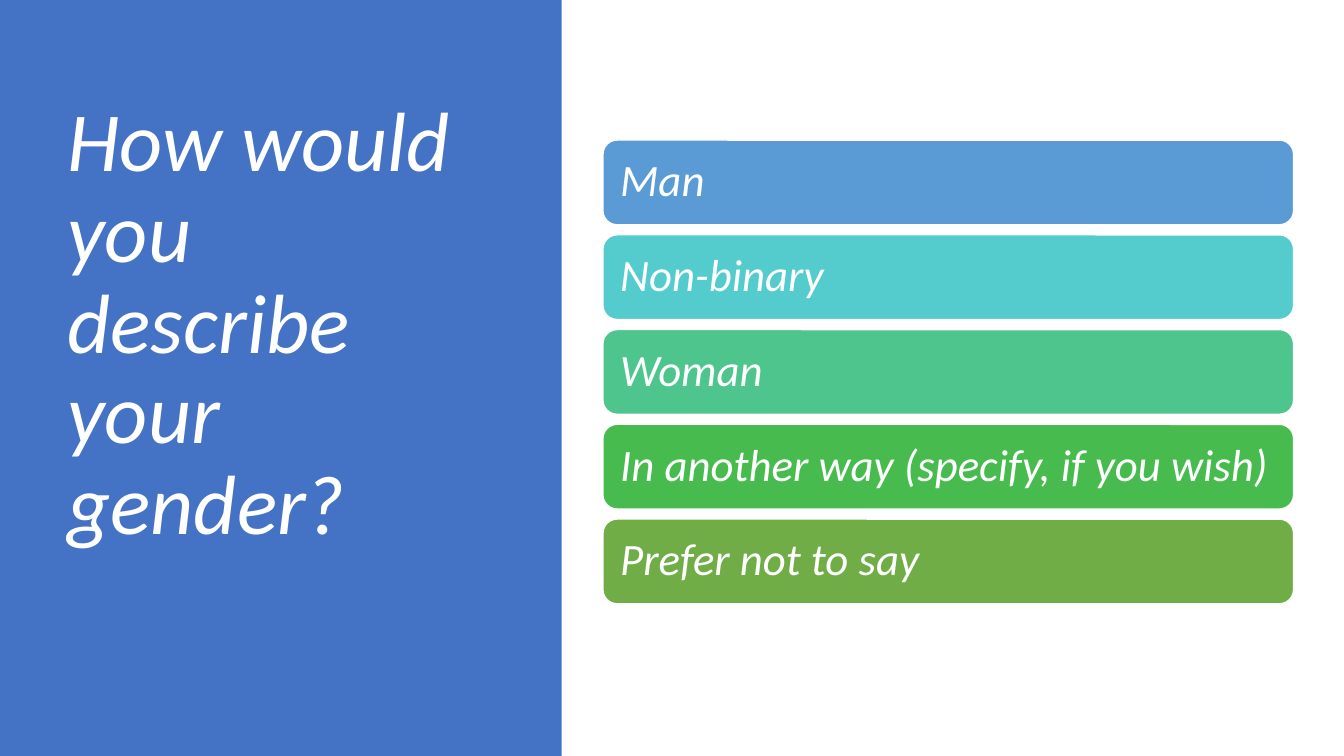
"""Build a slide that asks a question about gender beside five answer bars."""
import pptx
import pptx.dml.color
import pptx.enum.shapes
import pptx.enum.text
import pptx.util

Inches = pptx.util.Inches
RGBColor = pptx.dml.color.RGBColor
Shapes = pptx.enum.shapes.MSO_SHAPE

WHITE = RGBColor(0xFF, 0xFF, 0xFF)
PANEL_BLUE = RGBColor(0x44, 0x72, 0xC4)
ANSWERS = {
    "Man": RGBColor(0x5B, 0x9B, 0xD5),
    "Non-binary": RGBColor(0x54, 0xCC, 0xCD),
    "Woman": RGBColor(0x4D, 0xC5, 0x8D),
    "In another way (specify, if you wish)": RGBColor(0x48, 0xBB, 0x4F),
    "Prefer not to say": RGBColor(0x70, 0xAD, 0x47),
}
BAR_LEFT, BAR_TOP, BAR_WIDTH, BAR_HEIGHT, BAR_PITCH = 5.98, 1.39, 6.85, 0.84, 0.94


def write_text(shape, text, size, margins):
    """Put white italic text, left-aligned and vertically centred, in a shape."""
    frame = shape.text_frame
    frame.word_wrap = True
    frame.vertical_anchor = pptx.enum.text.MSO_ANCHOR.MIDDLE
    for side, margin in margins.items():
        setattr(frame, f"margin_{side}", Inches(margin))
    para = frame.paragraphs[0]
    para.alignment = pptx.enum.text.PP_ALIGN.LEFT
    para.line_spacing = 0.9
    span = para.add_run()
    span.text = text
    span.font.color.rgb = WHITE
    font_format = {"name": "Calibri", "size": pptx.util.Pt(size), "italic": True}
    for name, value in font_format.items():
        setattr(span.font, name, value)


deck = pptx.Presentation()
deck.slide_width, deck.slide_height = Inches(13.33), Inches(7.5)
page = deck.slides.add_slide(deck.slide_layouts[6])

panel = page.shapes.add_shape(Shapes.RECTANGLE, 0, 0, Inches(5.57), deck.slide_height)
panel.shadow.inherit = False
panel.fill.solid()
panel.fill.fore_color.rgb = PANEL_BLUE
panel.line.fill.background()

question = page.shapes.add_textbox(Inches(0.57), Inches(0.68), Inches(4.16), Inches(6.02))
write_text(question, "How would you describe your gender?", 60,
           {"left": 0.1, "right": 0.1, "top": 0.05, "bottom": 0.96})

for row, (answer, color) in enumerate(ANSWERS.items()):
    bar = page.shapes.add_shape(
        Shapes.ROUNDED_RECTANGLE, Inches(BAR_LEFT), Inches(BAR_TOP + row * BAR_PITCH),
        Inches(BAR_WIDTH), Inches(BAR_HEIGHT))
    bar.shadow.inherit = False
    bar.fill.solid()
    bar.fill.fore_color.rgb = color
    bar.line.color.rgb = WHITE
    bar.line.width = pptx.util.Pt(1)
    write_text(bar, answer, 32, dict.fromkeys(("left", "right", "top", "bottom"), 0.13))

deck.save("out.pptx")
